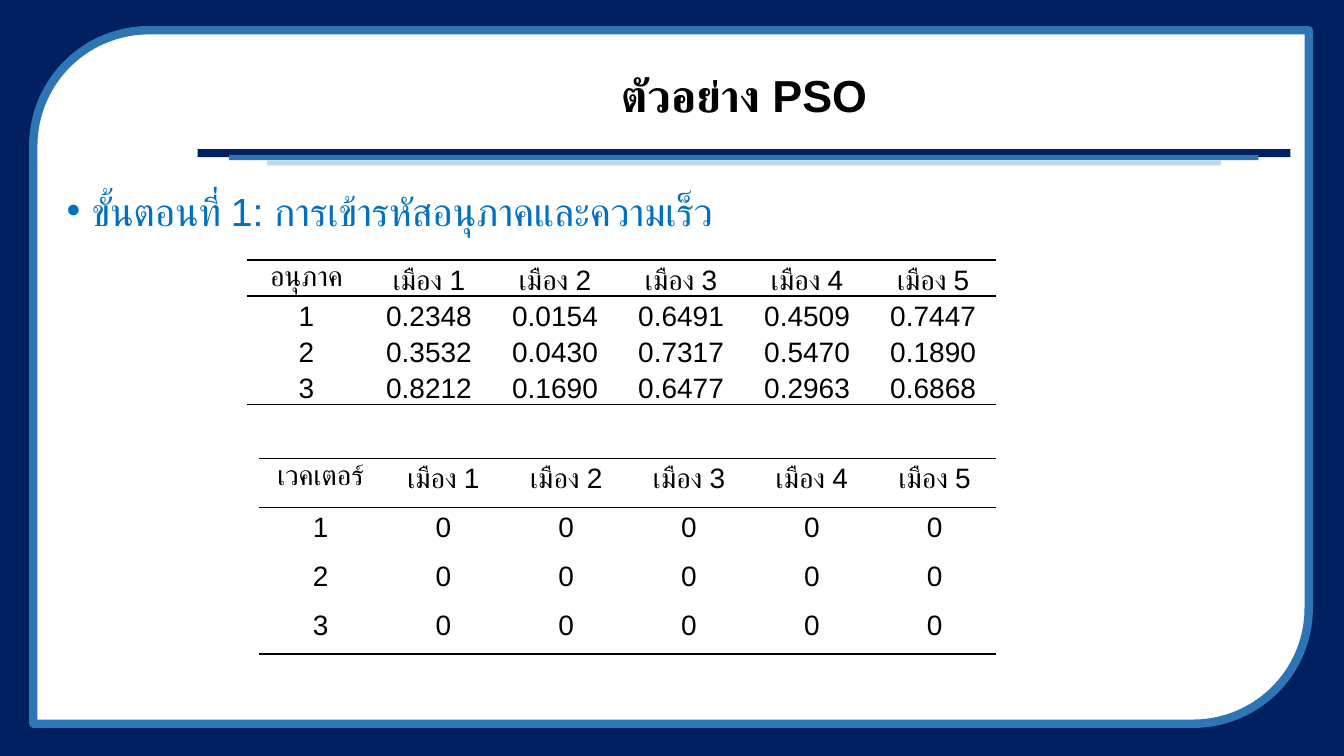
from lxml import etree
from pptx import Presentation
from pptx.dml.color import RGBColor
from pptx.enum.shapes import MSO_SHAPE
from pptx.enum.text import MSO_ANCHOR, PP_ALIGN
from pptx.oxml.ns import qn
from pptx.util import Inches, Pt

RECTANGLE = MSO_SHAPE.RECTANGLE
DIAGONAL_ROUND = MSO_SHAPE.ROUND_2_DIAG_RECTANGLE
CENTER = PP_ALIGN.CENTER
LEFT = PP_ALIGN.LEFT
TOP = MSO_ANCHOR.TOP
MIDDLE = MSO_ANCHOR.MIDDLE

FONT = "Arial"
COLORS = {
    "navy": "002060",
    "blue": "2E75B6",
    "pale": "BDD7EE",
    "step": "0070C0",
    "ink": "000000",
    "paper": "FFFFFF",
}
CITIES = [f"เมือง {number}" for number in range(1, 6)]
PARTICLES = [
    ["อนุภาค", *CITIES],
    ["1", "0.2348", "0.0154", "0.6491", "0.4509", "0.7447"],
    ["2", "0.3532", "0.0430", "0.7317", "0.5470", "0.1890"],
    ["3", "0.8212", "0.1690", "0.6477", "0.2963", "0.6868"],
]
VELOCITIES = [["เวคเตอร์", *CITIES]] + [[str(row)] + ["0"] * 5 for row in range(1, 4)]


def color(name):
    return RGBColor.from_string(COLORS[name])


def place(shape, box):
    shape.left, shape.top, shape.width, shape.height = map(Inches, box)


def add_panel(page, kind, box, fill, line=None):
    panel = page.shapes.add_shape(kind, *map(Inches, box))
    panel.shadow.inherit = False
    panel.fill.solid()
    panel.fill.fore_color.rgb = color(fill)
    if line:
        panel.line.color.rgb = color(line)
        panel.line.width = Pt(6)
    else:
        panel.line.fill.background()


def add_frame(page, box):
    left, top, width, height = box
    add_panel(page, RECTANGLE, box, "navy")
    inner = (left + 0.33, top + 0.3, width - 0.68, height - 0.62)
    add_panel(page, DIAGONAL_ROUND, inner, "paper", "blue")


def add_title_rule(page, box):
    """Draw three stacked bars, each shorter than the one above."""
    left, top, width, height = box
    add_panel(page, RECTANGLE, (left, top, width, height), "navy")
    add_panel(page, RECTANGLE, (left + 0.31, top + 0.06, width - 0.63, 0.05), "blue")
    add_panel(page, RECTANGLE, (left + 0.69, top + 0.11, width - 1.38, 0.05), "pale")


def write(para, text, size, ink, spacing, align, bold=False):
    para.alignment = align
    para.line_spacing = spacing
    span = para.add_run()
    span.text = text
    span.font.name = FONT
    span.font.size = Pt(size)
    span.font.bold = bold
    span.font.color.rgb = color(ink)


def fill_title(page, box):
    title = page.shapes.title
    page.shapes._spTree.append(title._element)  # bring in front of the frame
    place(title, box)
    title.text_frame.vertical_anchor = MIDDLE
    write(title.text_frame.paragraphs[0], "ตัวอย่าง PSO", 32, "ink", 0.9, CENTER, True)


def fill_body(page, box):
    body = page.placeholders[1]
    page.shapes._spTree.append(body._element)
    place(body, box)
    body.text_frame.vertical_anchor = TOP
    para = body.text_frame.paragraphs[0]
    properties = para._p.get_or_add_pPr()
    properties.set("marL", str(Inches(0.25)))
    properties.set("indent", str(-Inches(0.25)))
    etree.SubElement(properties, qn("a:buChar"), char="•")
    para.space_before = Pt(0)
    step = "ขั้นตอนที่ 1: การเข้ารหัสอนุภาคและความเร็ว"
    write(para, step, 28, "step", 1.2, LEFT)


def set_borders(cell, ruled):
    """Rule the named sides of a cell and clear the others."""
    properties = cell._tc.get_or_add_tcPr()
    for position, side in enumerate(("lnL", "lnR", "lnT", "lnB")):
        line = etree.Element(qn(f"a:{side}"), w=str(Pt(1)))
        if side in ruled:
            fill = etree.SubElement(line, qn("a:solidFill"))
            etree.SubElement(fill, qn("a:srgbClr"), val=COLORS["ink"])
        else:
            etree.SubElement(line, qn("a:noFill"))
        properties.insert(position, line)


def add_city_table(page, box, rows, first_width):
    left, top, width, height = box
    columns = len(rows[0])
    frame = page.shapes.add_table(len(rows), columns, *map(Inches, box))
    table = frame.table
    table.first_row = table.horz_banding = False
    other_width = (width - first_width) / (columns - 1)
    for index, column in enumerate(table.columns):
        column.width = Inches(other_width if index else first_width)
    rules = {0: ("lnT", "lnB"), 1: ("lnT",), len(rows) - 1: ("lnB",)}
    for row_index, row in enumerate(rows):
        table.rows[row_index].height = Inches(height / len(rows))
        for column_index, text in enumerate(row):
            cell = table.cell(row_index, column_index)
            cell.margin_left = cell.margin_right = Inches(0.07)
            cell.margin_top = cell.margin_bottom = 0
            cell.vertical_anchor = TOP
            cell.fill.background()
            set_borders(cell, rules.get(row_index, ()))
            write(cell.text_frame.paragraphs[0], text, 20, "ink", 1.15, CENTER)


def build_example_slide(deck):
    page = deck.slides.add_slide(deck.slide_layouts[1])
    add_frame(page, (0, 0, 13.33, 7.5))
    add_title_rule(page, (1.96, 1.48, 10.84, 0.08))
    fill_title(page, (1.96, 0.49, 10.84, 0.97))
    fill_body(page, (0.56, 1.71, 11.77, 4.78))
    add_city_table(page, (2.45, 2.58, 7.43, 1.43), PARTICLES, 1.18)
    add_city_table(page, (2.57, 4.55, 7.31, 1.94), VELOCITIES, 1.22)


def main():
    deck = Presentation()
    deck.slide_width = Inches(13.33)
    deck.slide_height = Inches(7.5)
    build_example_slide(deck)
    deck.save("out.pptx")


if __name__ == "__main__":
    main()
